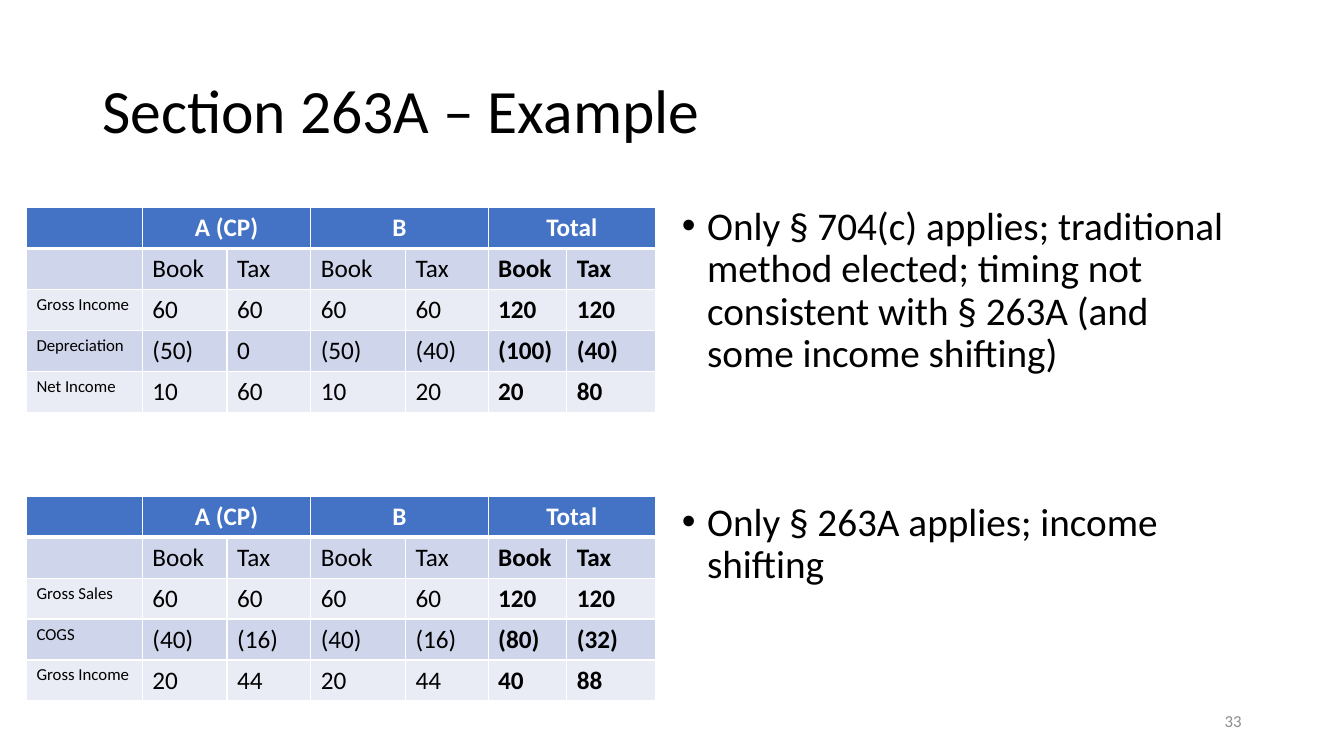
from dataclasses import dataclass

from lxml.etree import SubElement
from pptx import Presentation
from pptx.dml.color import RGBColor
from pptx.enum.text import MSO_ANCHOR, PP_ALIGN
from pptx.oxml.ns import qn
from pptx.slide import Slide
from pptx.table import _Cell
from pptx.text.text import TextFrame, _Paragraph
from pptx.util import Pt


@dataclass(frozen=True)
class Theme:
    font: str = "Calibri"
    black: str = "000000"
    white: str = "FFFFFF"
    gray: str = "8C8C8C"
    header: str = "4472C4"
    band_dark: str = "CFD5EA"
    band_light: str = "E9EBF5"
    title_size: float = 44
    body_size: float = 28
    table_size: float = 18
    small_size: float = 12


@dataclass(frozen=True)
class Box:
    left: float
    top: float
    width: float
    height: float


@dataclass(frozen=True)
class AccountTable:
    top: float
    rows: tuple[tuple[str, ...], ...]


@dataclass(frozen=True)
class Bullet:
    text: str
    space_before: float


THEME = Theme()
TABLE_LEFT = 18.9
ROW_HEIGHT = 29.2
COLUMN_WIDTHS = (82.8, 60.5, 59.8, 67.7, 59, 56.2, 63.4)
GROUPS = ("A (CP)", "B", "Total")
TOTAL_COLUMN = 5
HEADER_ROWS = (
    ("",) + tuple(text for group in GROUPS for text in (group, "")),
    ("",) + ("Book", "Tax") * len(GROUPS),
)
ACCOUNT_TABLES = (
    AccountTable(148.4, (
        ("Gross Income", "60", "60", "60", "60", "120", "120"),
        ("Depreciation", "(50)", "0", "(50)", "(40)", "(100)", "(40)"),
        ("Net Income", "10", "60", "10", "20", "20", "80"),
    )),
    AccountTable(354.6, (
        ("Gross Sales", "60", "60", "60", "60", "120", "120"),
        ("COGS", "(40)", "(16)", "(40)", "(16)", "(80)", "(32)"),
        ("Gross Income", "20", "44", "20", "44", "40", "88"),
    )),
)
BULLETS = (
    Bullet("Only § 704(c) applies; traditional method elected; timing not "
           "consistent with § 263A (and some income shifting)", 10),
    Bullet("Only § 263A applies; income shifting", 90.4),
)


def add_run(paragraph: _Paragraph, text: str, size: float, color: str,
            bold: bool = False) -> None:
    run = paragraph.add_run()
    run.text = text
    run.font.name = THEME.font
    run.font.size = Pt(size)
    run.font.bold = bold
    run.font.color.rgb = RGBColor.from_string(color)


def add_text_frame(slide: Slide, box: Box, anchor: MSO_ANCHOR) -> TextFrame:
    shape = slide.shapes.add_textbox(
        Pt(box.left), Pt(box.top), Pt(box.width), Pt(box.height))
    shape.text_frame.word_wrap = True
    shape.text_frame.vertical_anchor = anchor
    return shape.text_frame


def add_title(slide: Slide, text: str) -> None:
    frame = add_text_frame(slide, Box(66, 28.8, 828, 104.4), MSO_ANCHOR.MIDDLE)
    paragraph = frame.paragraphs[0]
    paragraph.line_spacing = 0.9
    add_run(paragraph, text, THEME.title_size, THEME.black)


def add_bullets(slide: Slide, bullets: tuple[Bullet, ...]) -> None:
    frame = add_text_frame(slide, Box(480, 144, 414, 342.6), MSO_ANCHOR.TOP)
    for index, bullet in enumerate(bullets):
        paragraph = frame.add_paragraph() if index else frame.paragraphs[0]
        paragraph.line_spacing = 0.9
        paragraph.space_before = Pt(bullet.space_before)
        properties = paragraph._p.get_or_add_pPr()
        properties.set("marL", str(Pt(18)))
        properties.set("indent", str(-Pt(18)))
        SubElement(properties, qn("a:buFont"), typeface="Arial")
        SubElement(properties, qn("a:buChar"), char="•")
        add_run(paragraph, bullet.text, THEME.body_size, THEME.black)


def style_cell(cell: _Cell, row: int) -> None:
    """Draw white borders, heavy under the header, and fill by row band."""
    properties = cell._tc.get_or_add_tcPr()
    heavy_side = {0: "lnB", 1: "lnT"}.get(row)
    for side in ("lnL", "lnR", "lnT", "lnB"):
        width = Pt(3 if side == heavy_side else 1)
        line = SubElement(properties, qn(f"a:{side}"), w=str(width))
        fill = SubElement(line, qn("a:solidFill"))
        SubElement(fill, qn("a:srgbClr"), val=THEME.white)
    band = THEME.band_dark if row % 2 else THEME.band_light
    cell.fill.solid()
    cell.fill.fore_color.rgb = RGBColor.from_string(
        THEME.header if row == 0 else band)


def write_cell(cell: _Cell, text: str, row: int, column: int) -> None:
    paragraph = cell.text_frame.paragraphs[0]
    if not text:
        paragraph.font.size = Pt(THEME.table_size)
        return
    is_header = row == 0
    if is_header:
        paragraph.alignment = PP_ALIGN.CENTER
    add_run(paragraph, text,
            THEME.table_size if column else THEME.small_size,
            THEME.white if is_header else THEME.black,
            is_header or column >= TOTAL_COLUMN)


def add_account_table(slide: Slide, account: AccountTable) -> None:
    rows = HEADER_ROWS + account.rows
    table = slide.shapes.add_table(
        len(rows), len(COLUMN_WIDTHS), Pt(TABLE_LEFT), Pt(account.top),
        Pt(sum(COLUMN_WIDTHS)), Pt(ROW_HEIGHT * len(rows))).table
    for column, width in zip(table.columns, COLUMN_WIDTHS):
        column.width = Pt(width)
    for first in range(1, len(COLUMN_WIDTHS), 2):
        table.cell(0, first).merge(table.cell(0, first + 1))
    for row, texts in enumerate(rows):
        table.rows[row].height = Pt(ROW_HEIGHT)
        for column, text in enumerate(texts):
            cell = table.cell(row, column)
            style_cell(cell, row)
            write_cell(cell, text, row, column)


def add_slide_number(slide: Slide, number: str) -> None:
    frame = add_text_frame(slide, Box(678, 500.5, 216, 28.8), MSO_ANCHOR.MIDDLE)
    paragraph = frame.paragraphs[0]
    paragraph.alignment = PP_ALIGN.RIGHT
    add_run(paragraph, number, THEME.small_size, THEME.gray)


def main() -> None:
    presentation = Presentation()
    presentation.slide_width = Pt(960)
    presentation.slide_height = Pt(540)
    slide = presentation.slides.add_slide(presentation.slide_layouts[6])
    add_title(slide, "Section 263A – Example")
    add_bullets(slide, BULLETS)
    for account in ACCOUNT_TABLES:
        add_account_table(slide, account)
    add_slide_number(slide, "33")
    presentation.save("out.pptx")


if __name__ == "__main__":
    main()
